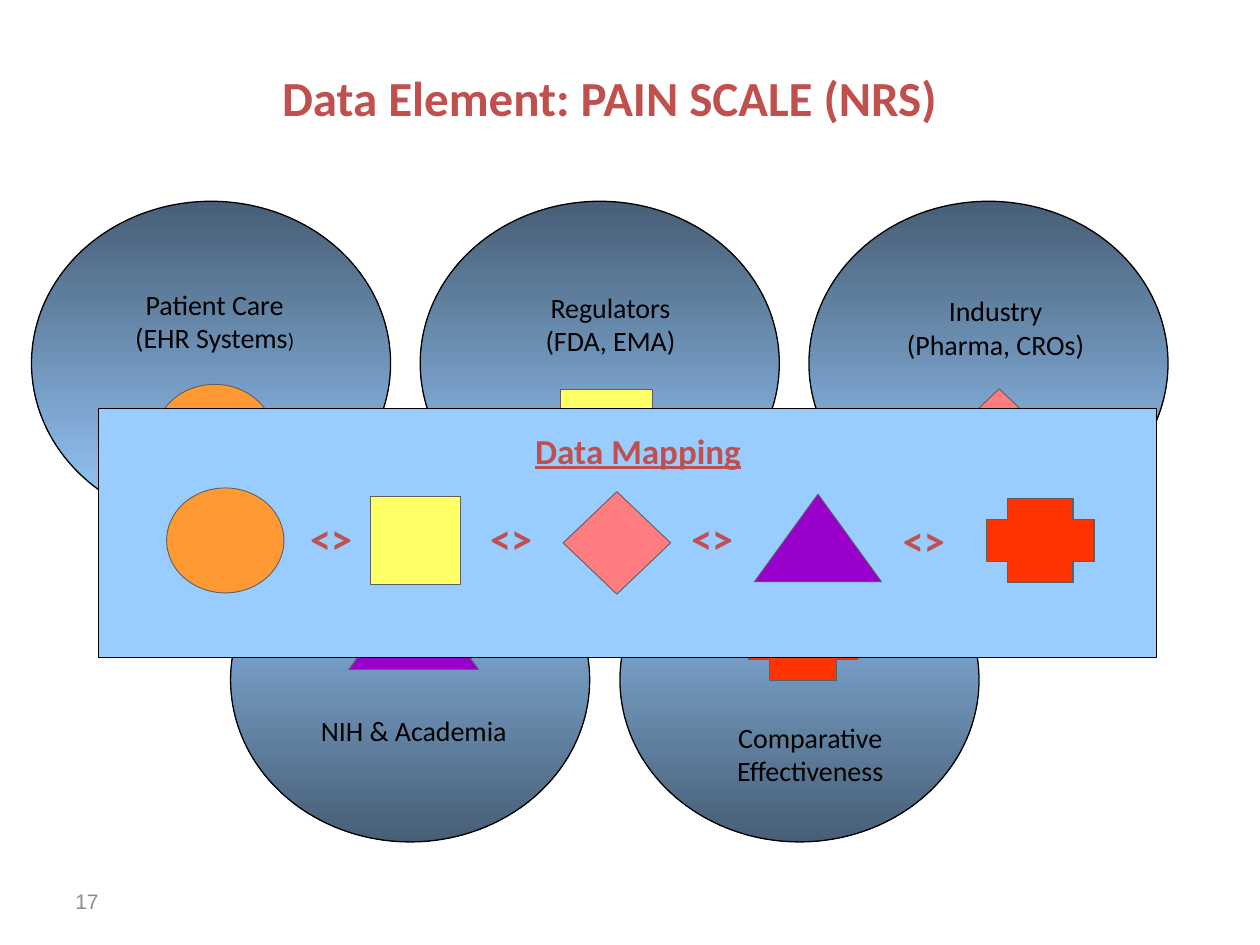
from collections import namedtuple
from dataclasses import dataclass

from pptx import Presentation
from pptx.dml.color import RGBColor
from pptx.enum.shapes import MSO_SHAPE as Preset
from pptx.enum.text import MSO_ANCHOR as Anchor, PP_ALIGN as Align
from pptx.util import Inches, Pt


@dataclass(frozen=True)
class Theme:
    font: str = "Calibri"
    number_font: str = "Arial"
    accent: str = "C0504D"
    text: str = "000000"
    muted: str = "8C8C8C"
    dark: str = "475E76"
    light: str = "99CCFF"
    symbol_line: str = "5F5F5F"
    title_size: float = 28
    sign_size: float = 24
    heading_size: float = 20
    label_size: float = 16
    small_size: float = 12


THEME = Theme()


class Box(namedtuple("Box", "left top width height")):
    def centred(self, x, y, width, height):
        """Box of a size in inches, centred at shares x, y of this box."""
        return Box(self.left + x * self.width - width / 2,
                   self.top + y * self.height - height / 2, width, height)

    def share(self, x, y, width, height):
        """Box given in percent of this box."""
        return Box(self.left + x * self.width / 100,
                   self.top + y * self.height / 100,
                   width * self.width / 100, height * self.height / 100)

    def lengths(self):
        return [Inches(value) for value in self]


SLIDE = Box(0, 0, 10, 7.5)
Symbol = namedtuple("Symbol", "preset color width height line_width")
Domain = namedtuple("Domain", "lines label_at label_width symbol symbol_at")

CIRCLE = Symbol(Preset.OVAL, "FF9933", 0.95, 0.85, 0.5)
SQUARE = Symbol(Preset.RECTANGLE, "FFFF66", 0.73, 0.72, 0.5)
DIAMOND = Symbol(Preset.DIAMOND, "FF7C80", 0.87, 0.83, 0.5)
TRIANGLE = Symbol(Preset.ISOSCELES_TRIANGLE, "9900CC", 1.03, 0.71, 0.5)
CROSS = Symbol(Preset.CROSS, "FF3300", 0.87, 0.68, 0.75)

TOP_ROW = [
    Domain([["Patient Care"], ["(EHR Systems", ")"]], (0.51, 0.37), 1.81,
           CIRCLE, (0.51, 0.73)),
    Domain([["Regulators"], ["(FDA, EMA)"]], (0.53, 0.38), 1.53,
           SQUARE, (0.52, 0.72)),
    Domain([["Industry"], ["(Pharma, CROs)"]], (0.52, 0.39), 1.94,
           DIAMOND, (0.53, 0.74)),
]
BOTTOM_ROW = [
    Domain([["NIH & Academia"]], (0.51, 0.71), 1.75, TRIANGLE, (0.51, 0.33)),
    Domain([["Comparative"], ["Effectiveness"]], (0.53, 0.73), 1.55,
           CROSS, (0.51, 0.37)),
]
MAPPED = [(CIRCLE, 0.12, 0.53), (SQUARE, 0.3, 0.53), (DIAMOND, 0.49, 0.54),
          (TRIANGLE, 0.68, 0.52), (CROSS, 0.89, 0.53)]
SIGNS = [(0.22, 0.52), (0.39, 0.52), (0.58, 0.52), (0.78, 0.53)]


def style_run(run, color, **font_values):
    for name, value in {"name": THEME.font, **font_values}.items():
        setattr(run.font, name, value)
    run.font.color.rgb = RGBColor.from_string(color)


def add_text(slide, box, lines, size, color=THEME.text, align=Align.CENTER,
             anchor=Anchor.TOP, **font_values):
    """Each line is a list of runs; runs after the first are small."""
    frame = slide.shapes.add_textbox(*box.lengths()).text_frame
    frame.word_wrap = True
    frame.vertical_anchor = anchor
    for index, runs in enumerate(lines):
        paragraph = frame.add_paragraph() if index else frame.paragraphs[0]
        paragraph.alignment = align
        for position, text in enumerate(runs):
            run = paragraph.add_run()
            run.text = text
            run_size = THEME.small_size if position else size
            style_run(run, color, size=Pt(run_size), **font_values)


def add_preset(slide, box, preset, colors, line_color, line_width):
    """One colour gives a solid fill, two a gradient from top to bottom."""
    shape = slide.shapes.add_shape(preset, *box.lengths())
    shape.shadow.inherit = False
    if len(colors) == 1:
        shape.fill.solid()
        shape.fill.fore_color.rgb = RGBColor.from_string(colors[0])
    else:
        shape.fill.gradient()
        shape.fill.gradient_angle = 270
        for stop, color in zip(shape.fill.gradient_stops, colors):
            stop.color.rgb = RGBColor.from_string(color)
    shape.line.color.rgb = RGBColor.from_string(line_color)
    shape.line.width = Pt(line_width)


def add_symbol(slide, box, symbol, x, y, scale=1):
    add_preset(slide,
               box.centred(x, y, symbol.width * scale, symbol.height * scale),
               symbol.preset, [symbol.color], THEME.symbol_line,
               symbol.line_width)


def add_title(slide, box):
    title = slide.shapes.title
    for name, value in zip(("left", "top", "width", "height"), box.lengths()):
        setattr(title, name, value)
    title.text_frame.vertical_anchor = Anchor.MIDDLE
    paragraph = title.text_frame.paragraphs[0]
    paragraph.alignment = Align.CENTER
    run = paragraph.add_run()
    run.text = "Data Element: PAIN SCALE (NRS) "
    style_run(run, THEME.accent, size=Pt(THEME.title_size), bold=True)


def add_domain(slide, box, domain, colors):
    add_preset(slide, box, Preset.OVAL, colors, THEME.text, 0.75)
    add_symbol(slide, box, domain.symbol, *domain.symbol_at)
    add_text(slide, box.centred(*domain.label_at, domain.label_width, 0.64),
             domain.lines, THEME.label_size)


def add_domain_row(slide, box, domains, colors):
    """Equal circles from the left to the right edge of the box."""
    width = 2.85
    step = (box.width - width) / (len(domains) - 1)
    for column, domain in enumerate(domains):
        circle = Box(box.left + column * step, box.top, width, box.height)
        add_domain(slide, circle, domain, colors)


def add_mapping_panel(slide, box):
    add_preset(slide, box, Preset.RECTANGLE, [THEME.light], THEME.text, 0.75)
    for symbol, x, y in MAPPED:
        add_symbol(slide, box, symbol, x, y, scale=0.98)
    add_text(slide, box.centred(0.51, 0.17, 2.38, 0.44), [["Data Mapping"]],
             THEME.heading_size, THEME.accent, bold=True, underline=True)
    for x, y in SIGNS:
        add_text(slide, box.centred(x, y, 0.99, 0.51), [["<>"]],
                 THEME.sign_size, THEME.accent, bold=True)


def add_slide_number(slide, box):
    add_text(slide, box, [["17"]], THEME.small_size, THEME.muted, Align.LEFT,
             Anchor.MIDDLE, name=THEME.number_font)


def main():
    presentation = Presentation()
    presentation.slide_width = Inches(SLIDE.width)
    presentation.slide_height = Inches(SLIDE.height)
    slide = presentation.slides.add_slide(presentation.slide_layouts[5])

    # Circles of the data domains, darkest at the outer edge
    add_domain_row(slide, SLIDE.share(18.3, 54.8, 59.4, 34.3), BOTTOM_ROW,
                   [THEME.light, THEME.dark])
    add_domain_row(slide, SLIDE.share(2.5, 21.3, 90.2, 34.3), TOP_ROW,
                   [THEME.dark, THEME.light])
    # Footer, panel across the circles, and title
    add_slide_number(slide, SLIDE.share(5, 92.7, 23.3, 5.3))
    add_mapping_panel(slide, SLIDE.share(7.8, 43.2, 84, 26.4))
    add_title(slide, SLIDE.share(1.7, 1.9, 94.2, 16.8))

    presentation.save("out.pptx")


if __name__ == "__main__":
    main()
